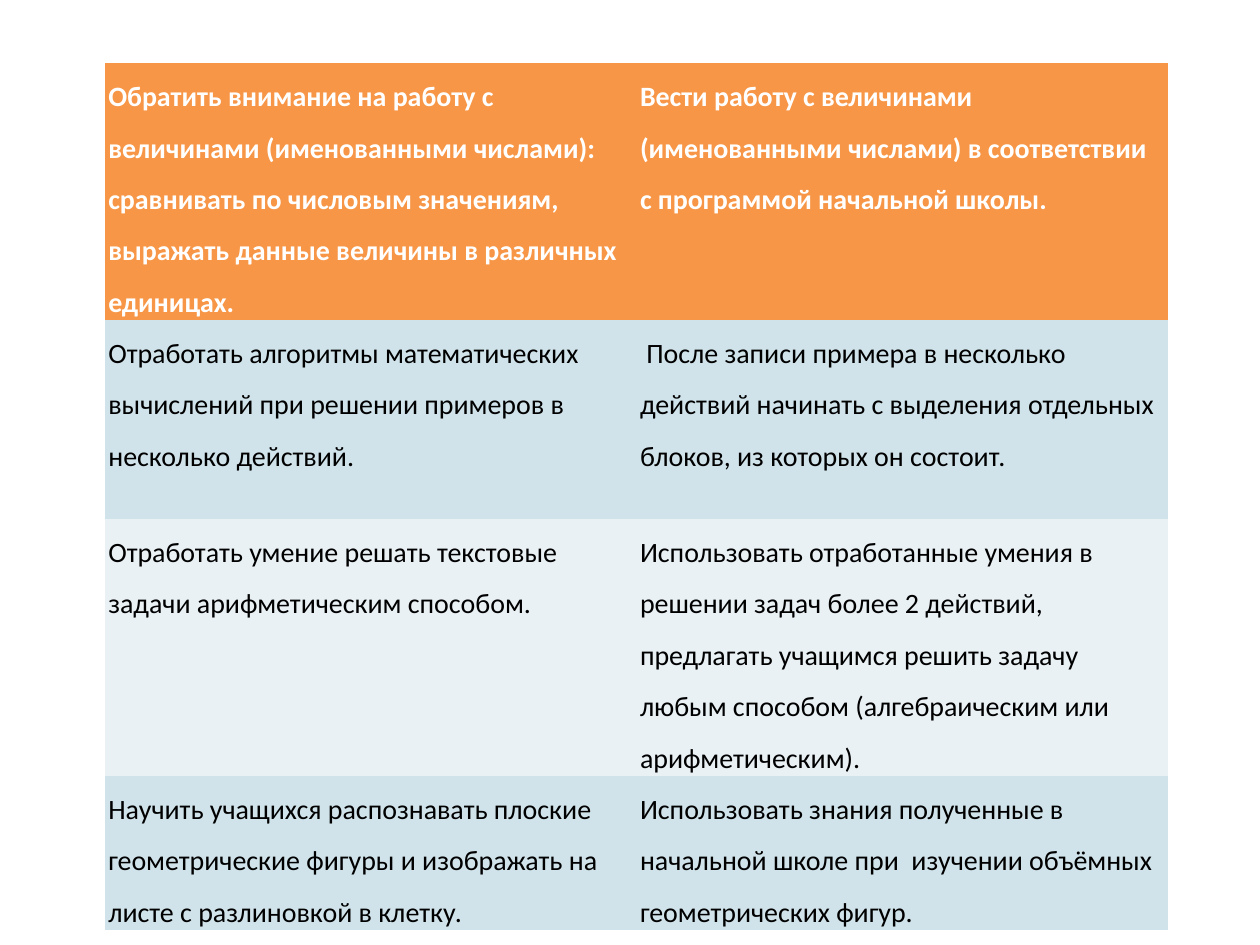
from pptx import Presentation
from pptx.dml.color import RGBColor
from pptx.util import Inches, Pt

ORANGE = RGBColor(0xF7, 0x96, 0x46)
BLUE = RGBColor(0xD0, 0xE3, 0xEA)
PALE = RGBColor(0xE9, 0xF1, 0xF5)
WHITE = RGBColor(0xFF, 0xFF, 0xFF)
BLACK = RGBColor(0x00, 0x00, 0x00)
NO_GRID_STYLE = "{2D5ABB26-0587-4C30-8999-92F81FD0307C}"

ROW_HEIGHTS = [1.93, 1.58, 1.89, 1.18]
ROWS = [
    ("Обратить внимание на работу с величинами (именованными числами): "
     "сравнивать по числовым значениям, выражать данные величины в различных единицах.",
     "Вести работу с величинами (именованными числами) в соответствии "
     "с программой начальной школы."),
    ("Отработать алгоритмы математических вычислений при решении примеров "
     "в несколько действий.",
     " После записи примера в несколько действий начинать с выделения "
     "отдельных блоков, из которых он состоит."),
    ("Отработать умение решать текстовые задачи арифметическим способом.",
     "Использовать отработанные умения в решении задач более 2 действий,  "
     "предлагать учащимся решить задачу любым способом "
     "(алгебраическим или арифметическим)."),
    ("Научить учащихся распознавать плоские геометрические фигуры "
     "и изображать на листе с разлиновкой в клетку.",
     "Использовать знания полученные в начальной школе при  изучении "
     "объёмных геометрических фигур."),
]


def fill_cell(cell, content, *, fill, color=BLACK, bold=False, size=16):
    """Write formatted text into a table cell and colour its background."""
    cell.fill.solid()
    cell.fill.fore_color.rgb = fill
    cell.margin_left = cell.margin_right = Inches(0.03)
    cell.margin_top = cell.margin_bottom = 0
    p = cell.text_frame.paragraphs[0]
    p.line_spacing = 1.5
    r = p.add_run()
    r.text = content
    r.font.name = "Calibri"
    r.font.size = Pt(size)
    r.font.bold = bold
    r.font.color.rgb = color


def add_goals_table(s):
    """Add the two-column table of goals with a header and banded rows."""
    frame = s.shapes.add_table(len(ROWS), 2, Inches(0.83), Inches(0.5),
                               Inches(8.44), Inches(sum(ROW_HEIGHTS)))
    table = frame.table
    table._tbl.tblPr.find("{*}tableStyleId").text = NO_GRID_STYLE
    for i, (height, row) in enumerate(zip(ROW_HEIGHTS, ROWS)):
        table.rows[i].height = Inches(height)
        if i == 0:
            style = dict(fill=ORANGE, color=WHITE, bold=True)
        else:
            style = dict(fill=BLUE if i % 2 else PALE)
        for j, content in enumerate(row):
            fill_cell(table.cell(i, j), content, **style)


def main():
    """Build the slide and save it."""
    prs = Presentation()
    prs.slide_width, prs.slide_height = Inches(10), Inches(7.5)
    s = prs.slides.add_slide(prs.slide_layouts[6])
    add_goals_table(s)
    prs.save("out.pptx")


if __name__ == "__main__":
    main()
